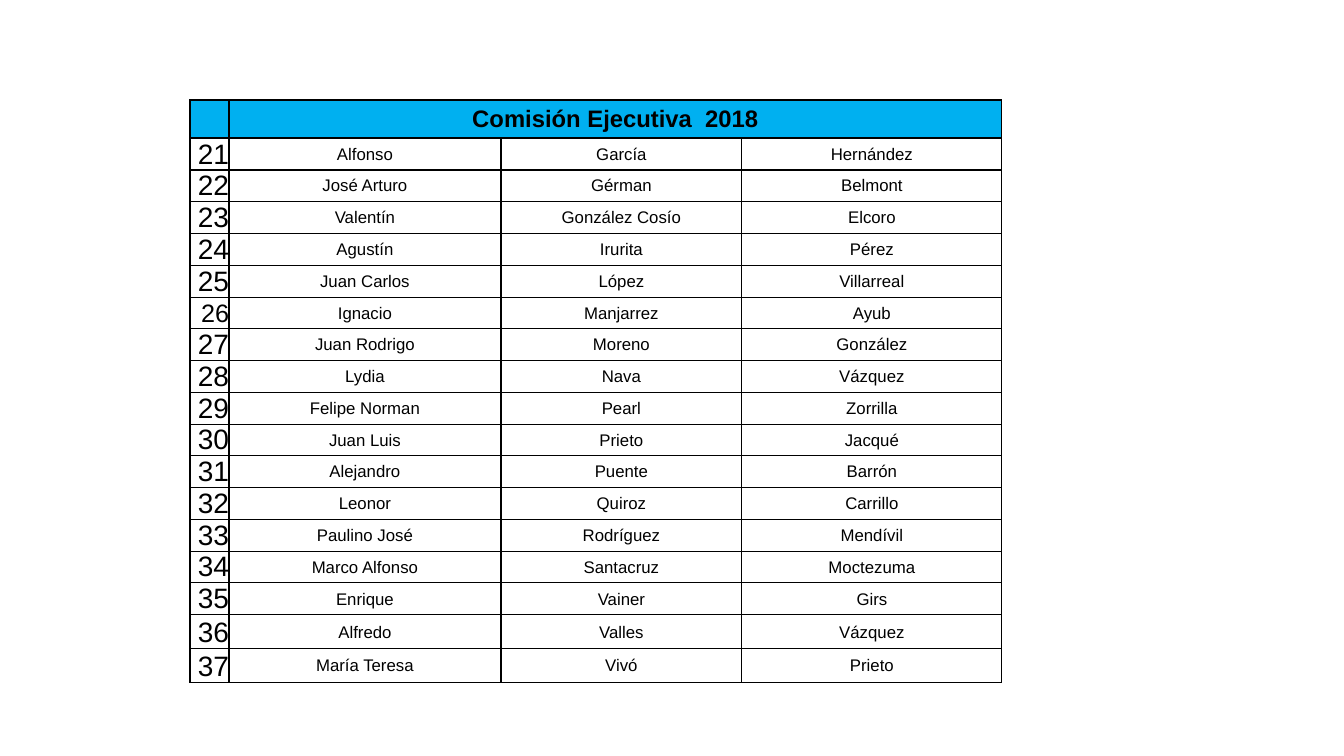
from dataclasses import dataclass

from lxml import etree
from pptx import Presentation
from pptx import util as u
from pptx.dml.color import RGBColor
from pptx.enum import text
from pptx.oxml import ns

PX = 914400 / 100.8
SLIDE = (1344, 756)
TABLE_BOX = (190, 100, 812, 582)
COLUMNS = (39, 272, 241, 260)
HEADER_HEIGHT = 38
LAST_HEIGHT = 34
LAST_ROWS = 2
FIRST_NUMBER = 21
SMALL_NUMBER = 26
TITLE = "Comisión Ejecutiva  2018"
MEMBERS = (
    ("Alfonso", "García", "Hernández"),
    ("José Arturo", "Gérman", "Belmont"),
    ("Valentín", "González Cosío", "Elcoro"),
    ("Agustín", "Irurita", "Pérez"),
    ("Juan Carlos", "López", "Villarreal"),
    ("Ignacio", "Manjarrez", "Ayub"),
    ("Juan Rodrigo", "Moreno", "González"),
    ("Lydia", "Nava", "Vázquez"),
    ("Felipe Norman", "Pearl", "Zorrilla"),
    ("Juan Luis", "Prieto", "Jacqué"),
    ("Alejandro", "Puente", "Barrón"),
    ("Leonor", "Quiroz", "Carrillo"),
    ("Paulino José", "Rodríguez", "Mendívil"),
    ("Marco Alfonso", "Santacruz", "Moctezuma"),
    ("Enrique", "Vainer", "Girs"),
    ("Alfredo", "Valles", "Vázquez"),
    ("María Teresa", "Vivó", "Prieto"),
)


@dataclass(frozen=True)
class Theme:
    font: str = "Arial"
    ink: str = "000000"
    header: str = "00B0F0"
    paper: str = "FFFFFF"
    title: int = 17
    number: int = 20
    small_number: int = 18
    name: int = 12
    border: int = 1


THEME = Theme()


def px(n):
    return u.Emu(round(n * PX))


def set_borders(cell):
    tcPr = cell._tc.get_or_add_tcPr()
    for side in ("lnL", "lnR", "lnT", "lnB"):
        ln = etree.SubElement(tcPr, ns.qn(f"a:{side}"), w=str(u.Pt(THEME.border)))
        fill = etree.SubElement(ln, ns.qn("a:solidFill"))
        etree.SubElement(fill, ns.qn("a:srgbClr"), val=THEME.ink)


def style_cell(cell, fill, inset=0):
    set_borders(cell)
    cell.fill.solid()
    cell.fill.fore_color.rgb = RGBColor.from_string(fill)
    cell.margin_left = cell.margin_top = cell.margin_right = px(inset)
    cell.margin_bottom = 0


def write_cell(cell, words, size, align=text.PP_ALIGN.CENTER,
               anchor=text.MSO_ANCHOR.MIDDLE, bold=False):
    cell.vertical_anchor = anchor
    p = cell.text_frame.paragraphs[0]
    p.text = words
    p.alignment = align
    p.font.name = THEME.font
    p.font.size = u.Pt(size)
    p.font.bold = bold
    p.font.color.rgb = RGBColor.from_string(THEME.ink)


def row_heights(height):
    count = len(MEMBERS) - LAST_ROWS
    space = height - HEADER_HEIGHT - LAST_ROWS * LAST_HEIGHT
    edges = [round(i * space / count) for i in range(count + 1)]
    regular = [b - a for a, b in zip(edges, edges[1:])]
    return [HEADER_HEIGHT, *regular, *[LAST_HEIGHT] * LAST_ROWS]


def add_header(table):
    cells = table.rows[0].cells
    for cell in cells:
        style_cell(cell, THEME.header)
    cells[1].merge(cells[3])
    write_cell(cells[1], TITLE, THEME.title, bold=True)


def add_member(table, row, names):
    number_cell, *name_cells = table.rows[row].cells
    number = FIRST_NUMBER + row - 1
    size = THEME.small_number if number == SMALL_NUMBER else THEME.number
    style_cell(number_cell, THEME.paper)
    write_cell(number_cell, str(number), size, text.PP_ALIGN.RIGHT, text.MSO_ANCHOR.BOTTOM)
    for cell, name in zip(name_cells, names):
        style_cell(cell, THEME.paper, inset=1)
        write_cell(cell, name, THEME.name)


def add_committee_table(s, box):
    frame = s.shapes.add_table(len(MEMBERS) + 1, len(COLUMNS), *map(px, box))
    table = frame.table
    table.first_row = table.horz_banding = False
    for column, width in zip(table.columns, COLUMNS):
        column.width = px(width)
    for row, height in zip(table.rows, row_heights(box[3])):
        row.height = px(height)
    add_header(table)
    for row, names in enumerate(MEMBERS, 1):
        add_member(table, row, names)


def main():
    prs = Presentation()
    prs.slide_width, prs.slide_height = map(px, SLIDE)
    s = prs.slides.add_slide(prs.slide_layouts[6])
    add_committee_table(s, TABLE_BOX)
    prs.save("out.pptx")


if __name__ == "__main__":
    main()
